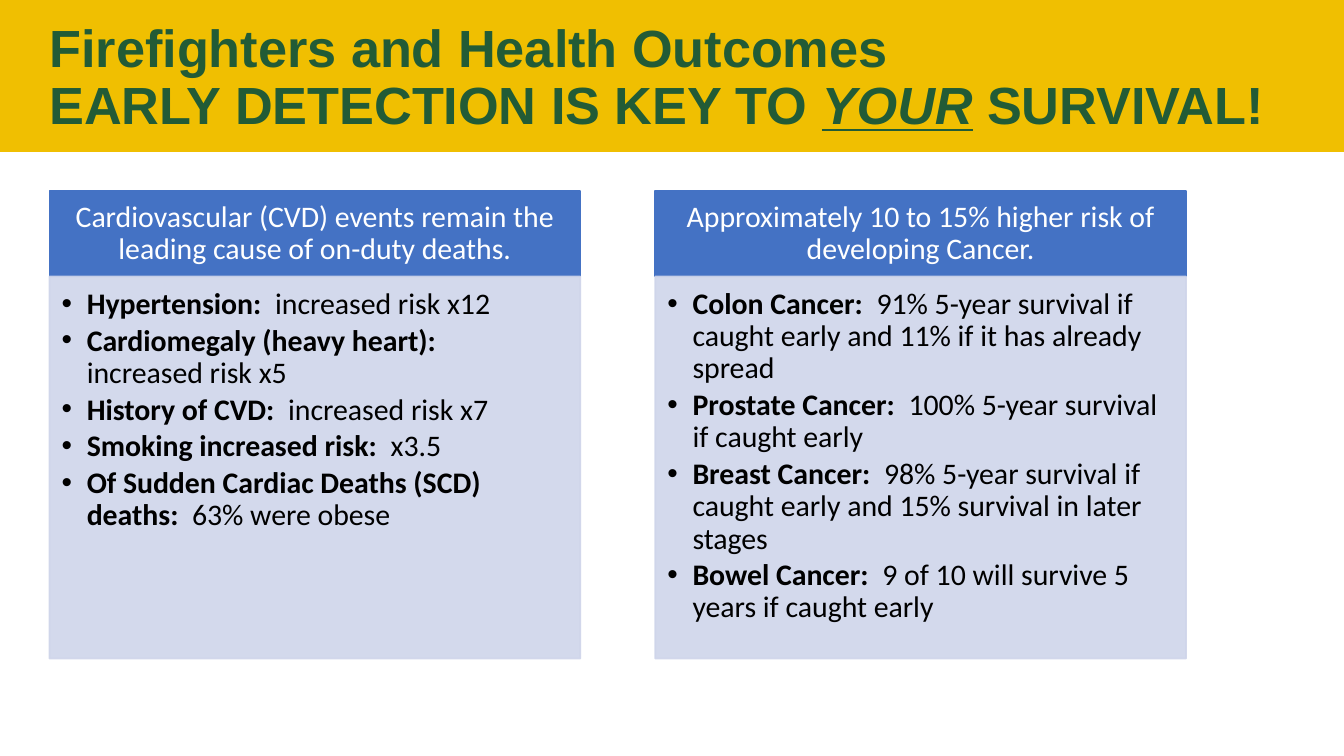
from dataclasses import dataclass

from lxml.etree import SubElement
from pptx import Presentation
from pptx.dml.color import RGBColor
from pptx.enum.shapes import MSO_SHAPE as Preset
from pptx.enum.text import MSO_ANCHOR as Anchor, MSO_AUTO_SIZE as AutoSize, PP_ALIGN as Align
from pptx.oxml.ns import qn
from pptx.shapes.autoshape import Shape
from pptx.slide import Slide
from pptx.text.text import TextFrame
from pptx.util import Pt

GOLD = RGBColor(0xF0, 0xBF, 0x01)
GREEN = RGBColor(0x22, 0x5B, 0x36)
BLUE = RGBColor(0x44, 0x72, 0xC4)
PALE_BLUE = RGBColor(0xCF, 0xD5, 0xEA)
WHITE = RGBColor(0xFF, 0xFF, 0xFF)
BLACK = RGBColor(0x00, 0x00, 0x00)

MARGIN = 26.5
PANEL_WIDTH = 284.4
PANEL_PITCH = 324.5
HEADER_TOP = 102.2
HEADER_HEIGHT = 46
BODY_HEIGHT = 204.6
BULLET_INDENT = 13.5


@dataclass(frozen=True)
class Fact:
    label: str
    detail: str


@dataclass(frozen=True)
class Panel:
    heading: str
    facts: tuple[Fact, ...]


PANELS = (
    Panel(
        "Cardiovascular (CVD) events remain the leading cause of on-duty deaths.",
        (
            Fact("Hypertension:  ", "increased risk x12"),
            Fact("Cardiomegaly (heavy heart):  ", "increased risk x5"),
            Fact("History of CVD:  ", "increased risk x7"),
            Fact("Smoking increased risk:  ", "x3.5"),
            Fact("Of Sudden Cardiac Deaths (SCD) deaths:  ", "63% were obese"),
        ),
    ),
    Panel(
        "Approximately 10 to 15% higher risk of developing Cancer.",
        (
            Fact("Colon Cancer:  ", "91% 5-year survival if caught early and 11% if it has already spread"),
            Fact("Prostate Cancer:  ", "100% 5-year survival if caught early"),
            Fact("Breast Cancer:  ", "98% 5-year survival if caught early and 15% survival in later stages"),
            Fact("Bowel Cancer:  ", "9 of 10 will survive 5 years if caught early"),
        ),
    ),
)


def set_insets(frame: TextFrame, left: float, top: float, right: float, bottom: float) -> None:
    frame.margin_left, frame.margin_top = Pt(left), Pt(top)
    frame.margin_right, frame.margin_bottom = Pt(right), Pt(bottom)
    frame.word_wrap = True


def style_paragraph(paragraph, name: str, size: float, color: RGBColor, align: Align) -> None:
    paragraph.alignment = align
    paragraph.line_spacing = 0.9
    paragraph.font.name = name
    paragraph.font.size = Pt(size)
    paragraph.font.color.rgb = color


def add_rectangle(slide: Slide, left: float, top: float, width: float, height: float, color: RGBColor) -> Shape:
    shape = slide.shapes.add_shape(Preset.RECTANGLE, Pt(left), Pt(top), Pt(width), Pt(height))
    shape.shadow.inherit = False
    shape.fill.solid()
    shape.fill.fore_color.rgb = color
    shape.line.color.rgb = color
    shape.line.width = Pt(1)
    return shape


def make_translucent(shape: Shape, percent: int) -> None:
    for color in shape.element.spPr.iter(qn("a:srgbClr")):
        SubElement(color, qn("a:alpha"), val=str(percent * 1000))


def add_bullet(paragraph) -> None:
    properties = paragraph._p.get_or_add_pPr()
    properties.set("marL", str(Pt(BULLET_INDENT)))
    properties.set("indent", str(-Pt(BULLET_INDENT)))
    SubElement(properties, qn("a:buFont"), typeface="Arial")
    SubElement(properties, qn("a:buChar"), char="•")


def add_panel(slide: Slide, panel: Panel, left: float) -> None:
    header = add_rectangle(slide, left, HEADER_TOP, PANEL_WIDTH, HEADER_HEIGHT, BLUE)
    set_insets(header.text_frame, 8.6, 5, 8.6, 5)
    header.text_frame.vertical_anchor = Anchor.MIDDLE
    heading = header.text_frame.paragraphs[0]
    heading.text = panel.heading
    style_paragraph(heading, "Calibri", 16, WHITE, Align.CENTER)

    body = add_rectangle(slide, left, HEADER_TOP + HEADER_HEIGHT, PANEL_WIDTH, BODY_HEIGHT, PALE_BLUE)
    make_translucent(body, 90)
    frame = body.text_frame
    set_insets(frame, 6.5, 6.5, 8.6, 10)
    frame.vertical_anchor = Anchor.TOP
    for index, fact in enumerate(panel.facts):
        paragraph = frame.add_paragraph() if index else frame.paragraphs[0]
        paragraph.level = 1
        add_bullet(paragraph)
        style_paragraph(paragraph, "Calibri", 16, BLACK, Align.LEFT)
        paragraph.space_after = Pt(2.4)
        label = paragraph.add_run()
        label.text = fact.label
        label.font.bold = True
        paragraph.add_run().text = fact.detail


def add_title(slide: Slide) -> None:
    band = add_rectangle(slide, 0, 0, 720, 81.4, GOLD)
    band.line.fill.background()
    title = slide.shapes.title
    title.element.addprevious(band.element)
    title.left, title.top, title.width, title.height = Pt(MARGIN), Pt(0.7), Pt(688.3), Pt(83.5)
    frame = title.text_frame
    set_insets(frame, 0, 0, 0, 0)
    frame.auto_size = AutoSize.NONE
    frame.vertical_anchor = Anchor.MIDDLE
    paragraph = frame.paragraphs[0]
    style_paragraph(paragraph, "Arial", 28, GREEN, Align.LEFT)
    paragraph.font.bold = True
    paragraph.add_run().text = "Firefighters and Health Outcomes"
    paragraph.add_line_break()
    paragraph.add_run().text = "EARLY DETECTION IS KEY TO "
    emphasis = paragraph.add_run()
    emphasis.text = "YOUR"
    emphasis.font.italic = True
    emphasis.font.underline = True
    paragraph.add_run().text = " SURVIVAL!"


def main() -> None:
    presentation = Presentation()
    presentation.slide_width, presentation.slide_height = Pt(720), Pt(405)
    slide = presentation.slides.add_slide(presentation.slide_layouts[5])
    add_title(slide)
    for index, panel in enumerate(PANELS):
        add_panel(slide, panel, MARGIN + index * PANEL_PITCH)
    presentation.save("out.pptx")


if __name__ == "__main__":
    main()
